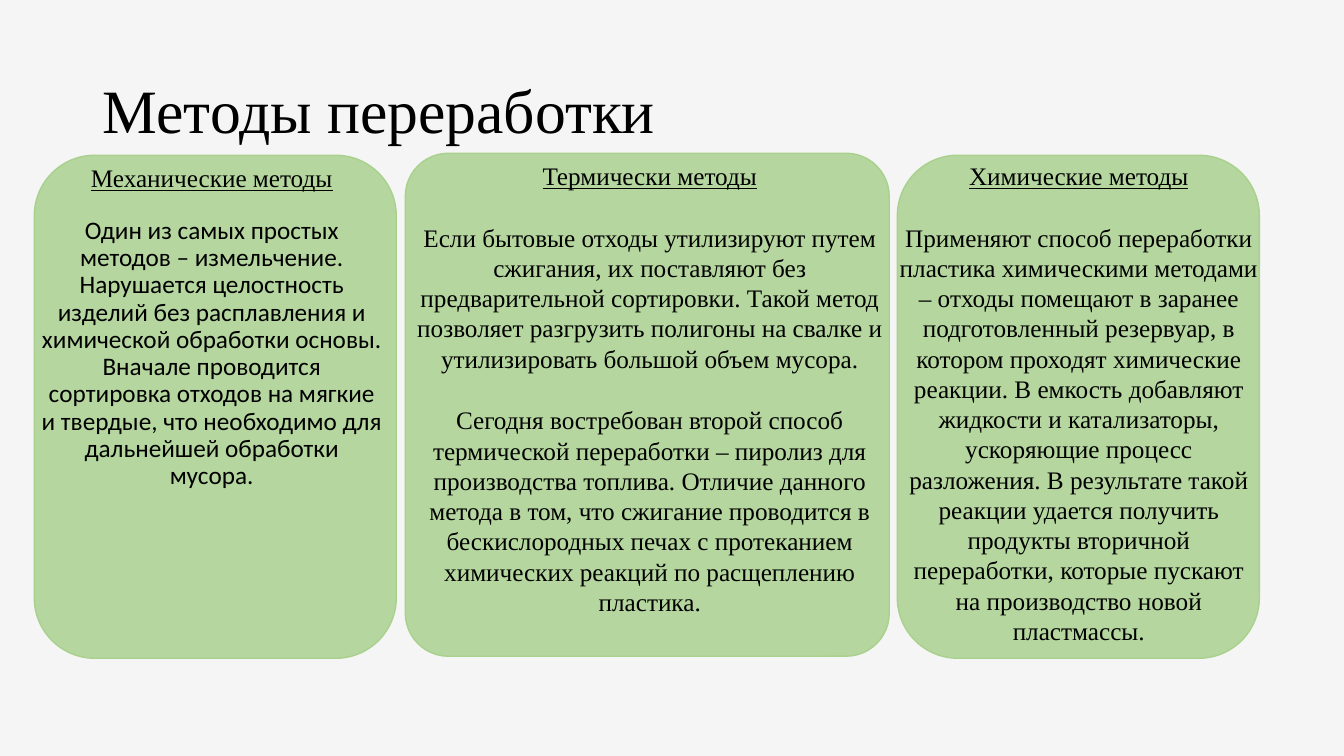
from lxml import etree
from pptx import Presentation, util as u
from pptx.dml.color import RGBColor
from pptx.enum import shapes, text
from pptx.oxml.ns import qn

THEME = {
    "background": RGBColor.from_string("F5F5F5"),
    "card": RGBColor.from_string("A9D18E"),
    "text": RGBColor.from_string("000000"),
    "card_opacity": 84,
    "serif": "Times New Roman",
    "sans": "Calibri",
    "title_size": u.Pt(44),
    "body_size": u.Pt(18),
}


def add_text(slide, box, paragraphs, anchor=text.MSO_ANCHOR.TOP):
    """Add a text box; each paragraph is (wording, paragraph format, font format)."""
    sp = slide.shapes.add_textbox(*map(u.Inches, box))
    tf = sp.text_frame
    tf.word_wrap = True
    tf.vertical_anchor = anchor
    for i, (wording, para_format, font_format) in enumerate(paragraphs):
        p = tf.add_paragraph() if i else tf.paragraphs[0]
        for name, value in para_format.items():
            setattr(p, name, value)
        r = p.add_run()
        r.text = wording
        r.font.color.rgb = THEME["text"]
        for name, value in font_format.items():
            setattr(r.font, name, value)


# Slide and background
prs = Presentation()
prs.slide_width, prs.slide_height = u.Inches(13.33), u.Inches(7.5)
s = prs.slides.add_slide(prs.slide_layouts[6])
s.background.fill.solid()
s.background.fill.fore_color.rgb = THEME["background"]

# Paragraph and font formats
centre = text.PP_ALIGN.CENTER
spaced = {"alignment": centre, "space_after": u.Pt(22.5)}
tight_heading = {"alignment": centre, "line_spacing": 1.07,
                 "space_before": u.Pt(10), "space_after": u.Pt(8)}
tight_body = {"alignment": centre, "line_spacing": 0.9, "space_before": u.Pt(10)}
serif = {"name": THEME["serif"], "size": THEME["body_size"]}
sans = {"name": THEME["sans"], "size": THEME["body_size"]}
heading = {**serif, "underline": True}

# One entry per method: card, corner rounding, text box, paragraphs
methods = [
    {
        "card": (0.34, 1.54, 3.59, 4.99), "corner": 0.167,
        "box": (0.31, 1.54, 3.58, 3.5),
        "paragraphs": [
            ("Механические методы", tight_heading, heading),
            ("Один из самых простых методов – измельчение. Нарушается целостность "
             "изделий без расплавления и химической обработки основы. Вначале "
             "проводится сортировка отходов на мягкие и твердые, что необходимо "
             "для дальнейшей обработки мусора.", tight_body, sans),
        ],
    },
    {
        "card": (4.02, 1.52, 4.8, 4.99), "corner": 0.089,
        "box": (4.01, 1.54, 4.87, 4.68),
        "paragraphs": [
            ("Термически методы", spaced, heading),
            ("Если бытовые отходы утилизируют путем сжигания, их поставляют без "
             "предварительной сортировки. Такой метод позволяет разгрузить "
             "полигоны на свалке и утилизировать большой объем мусора.",
             spaced, serif),
            ("Сегодня востребован второй способ термической переработки – пиролиз "
             "для производства топлива. Отличие данного метода в том, что сжигание "
             "проводится в бескислородных печах с протеканием химических реакций "
             "по расщеплению пластика.", spaced, serif),
        ],
    },
    {
        "card": (8.9, 1.54, 3.59, 4.99), "corner": 0.167,
        "box": (8.82, 1.54, 3.76, 5.59),
        "paragraphs": [
            ("Химические методы", spaced, heading),
            ("Применяют способ переработки пластика химическими методами – отходы "
             "помещают в заранее подготовленный резервуар, в котором проходят "
             "химические реакции. В емкость добавляют жидкости и катализаторы, "
             "ускоряющие процесс разложения. В результате такой реакции удается "
             "получить продукты вторичной переработки, которые пускают на "
             "производство новой пластмассы.", spaced, serif),
        ],
    },
]

# Translucent cards
for method in methods:
    sp = s.shapes.add_shape(shapes.MSO_SHAPE.ROUNDED_RECTANGLE,
                            *map(u.Inches, method["card"]))
    sp.adjustments[0] = method["corner"]
    sp.shadow.inherit = False
    sp.fill.solid()
    sp.fill.fore_color.rgb = THEME["card"]
    color = sp.fill._xPr.find(qn("a:solidFill"))[0]
    etree.SubElement(color, qn("a:alpha"), val=str(THEME["card_opacity"] * 1000))
    sp.line.color.rgb = THEME["card"]
    sp.line.width = u.Pt(1)

# Title
add_text(s, (0.92, 0.4, 11.5, 1.45),
         [("Методы переработки", {"line_spacing": 0.9},
           {"name": THEME["serif"], "size": THEME["title_size"]})],
         text.MSO_ANCHOR.MIDDLE)

# Method descriptions
for method in methods:
    add_text(s, method["box"], method["paragraphs"])

prs.save("out.pptx")
